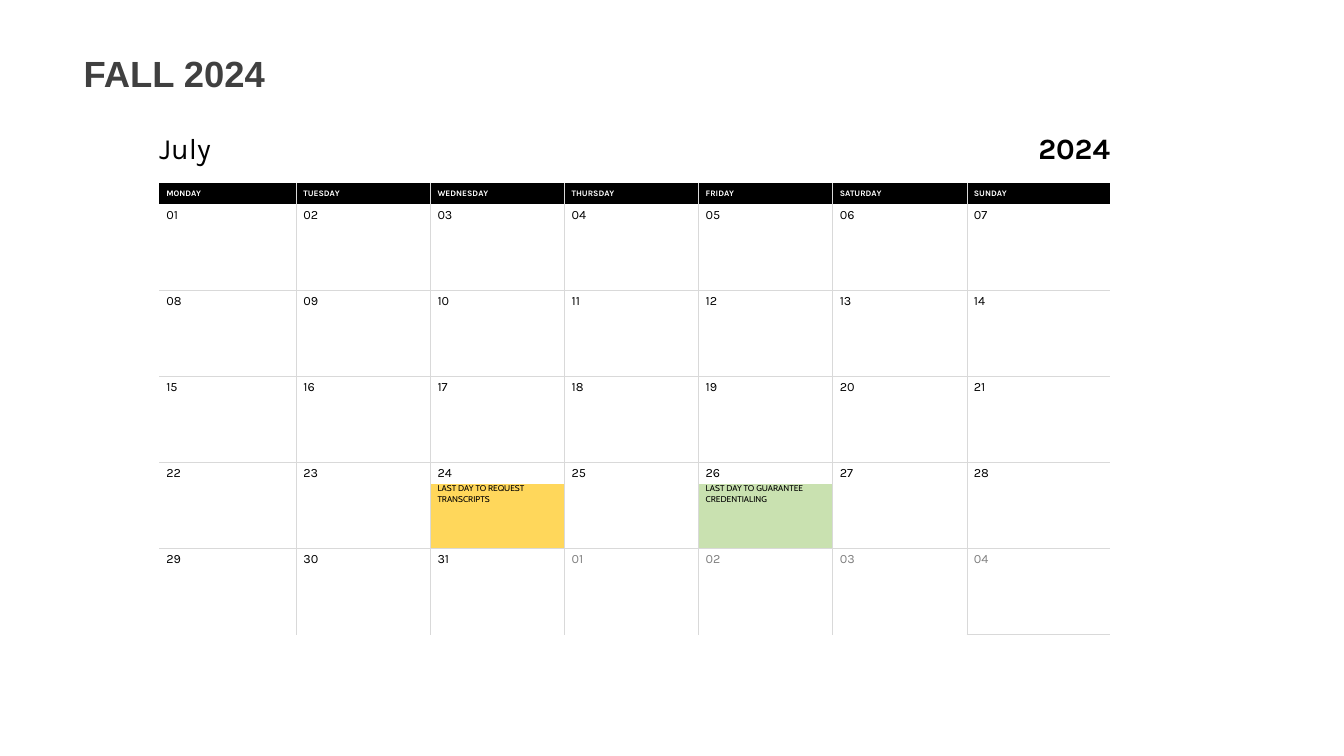
import pptx
import pptx.dml.color
import pptx.enum.text
import pptx.oxml
import pptx.oxml.ns
import pptx.util
from pptx.util import Inches

BLACK, WHITE, GRAY, RULE = "000000", "FFFFFF", "808080", "D9D9D9"
MIDDLE = pptx.enum.text.MSO_ANCHOR.MIDDLE


def style_text(text_frame, size, font_name, color, bold=False):
    font = text_frame.paragraphs[0].runs[0].font
    font.size = pptx.util.Pt(size)
    font.name = font_name
    font.bold = bold
    font.color.rgb = pptx.dml.color.RGBColor.from_string(color)


def set_borders(cell, sides):
    properties = cell._tc.get_or_add_tcPr()
    for side in "LRTB":
        paint = f'<a:solidFill><a:srgbClr val="{RULE}"/></a:solidFill>' if side in sides else "<a:noFill/>"
        properties.append(pptx.oxml.parse_xml(
            f'<a:ln{side} w="6350" {pptx.oxml.ns.nsdecls("a")}>{paint}</a:ln{side}>'))


presentation = pptx.Presentation()
presentation.slide_width = Inches(13.33)
presentation.slide_height = Inches(7.5)
slide = presentation.slides.add_slide(presentation.slide_layouts[6])

# Title
title = slide.shapes.add_textbox(Inches(0.73), Inches(0.47), Inches(10.81), Inches(0.57))
title.text_frame.word_wrap = True
title.text_frame.vertical_anchor = MIDDLE
title.text_frame.text = "FALL 2024"
title.text_frame.paragraphs[0].line_spacing = 0.9
style_text(title.text_frame, 26, "Arial", "404040", True)

# Calendar grid: month row, weekday row, then a date row and a body row per week
weekdays = ["MONDAY", "TUESDAY", "WEDNESDAY", "THURSDAY", "FRIDAY", "SATURDAY", "SUNDAY"]
weeks, days_in_month = 5, 31
row_count, last_column = 2 + 2 * weeks, len(weekdays) - 1
column_widths = [1.36] + [1.33] * 5 + [1.42]
table_height = 5.13
week_height = table_height / (weeks + 1)

calendar = slide.shapes.add_table(row_count, len(weekdays), Inches(1.58), Inches(1.17),
                                  Inches(sum(column_widths)), Inches(table_height)).table
calendar.first_row = False
calendar.horz_banding = False
for column, width in zip(calendar.columns, column_widths):
    column.width = Inches(width)
for row_index, row in enumerate(calendar.rows):
    is_body = row_index == 0 or (row_index > 1 and row_index % 2 == 1)
    row.height = Inches(week_height * (0.75 if is_body else 0.25))

# Cell contents: text, size, font, colour, bold
contents = {
    (0, 0): ("July", 21, "Karla", BLACK, False),
    (0, last_column): ("2024", 21, "Karla", BLACK, True),
}
for column_index, weekday in enumerate(weekdays):
    contents[1, column_index] = (weekday, 6, "Karla", WHITE, True)
for day_index in range(weeks * len(weekdays)):
    week, column_index = divmod(day_index, len(weekdays))
    day = day_index % days_in_month + 1
    color = BLACK if day_index < days_in_month else GRAY
    contents[2 + 2 * week, column_index] = (f"{day:02d}", 9, "Karla", color, False)

# Events: day of July, text, fill
event_fills = {}
for day, event, fill in [(24, "LAST DAY TO REQUEST TRANSCRIPTS", "FFD75B"),
                         (26, "LAST DAY TO GUARANTEE CREDENTIALING", "C9E1B0")]:
    week, column_index = divmod(day - 1, len(weekdays))
    position = (3 + 2 * week, column_index)
    contents[position] = (event, 6, "Cabin", BLACK, False)
    event_fills[position] = fill

# Fill the cells
for row_index in range(row_count):
    for column_index in range(len(weekdays)):
        position = (row_index, column_index)
        cell = calendar.cell(row_index, column_index)

        sides = ""
        if row_index > 0:
            sides += "L" if column_index > 0 else ""
            sides += "R" if column_index < last_column else ""
        if row_index > 2 and row_index % 2 == 0:
            sides += "T"
        if row_index > 2 and row_index % 2 == 1:
            if row_index < row_count - 1 or column_index == last_column:
                sides += "B"
        set_borders(cell, sides)

        fill = BLACK if row_index == 1 else event_fills.get(position)
        if fill:
            cell.fill.solid()
            cell.fill.fore_color.rgb = pptx.dml.color.RGBColor.from_string(fill)
        else:
            cell.fill.background()

        if position in contents:
            text, *style = contents[position]
            cell.margin_left = Inches(0.07 if row_index else 0)
            cell.margin_right = cell.margin_top = cell.margin_bottom = Inches(0)
            if position not in event_fills:
                cell.vertical_anchor = MIDDLE
            cell.text_frame.text = text
            style_text(cell.text_frame, *style)

calendar.cell(0, last_column).text_frame.paragraphs[0].alignment = pptx.enum.text.PP_ALIGN.RIGHT

presentation.save("out.pptx")
